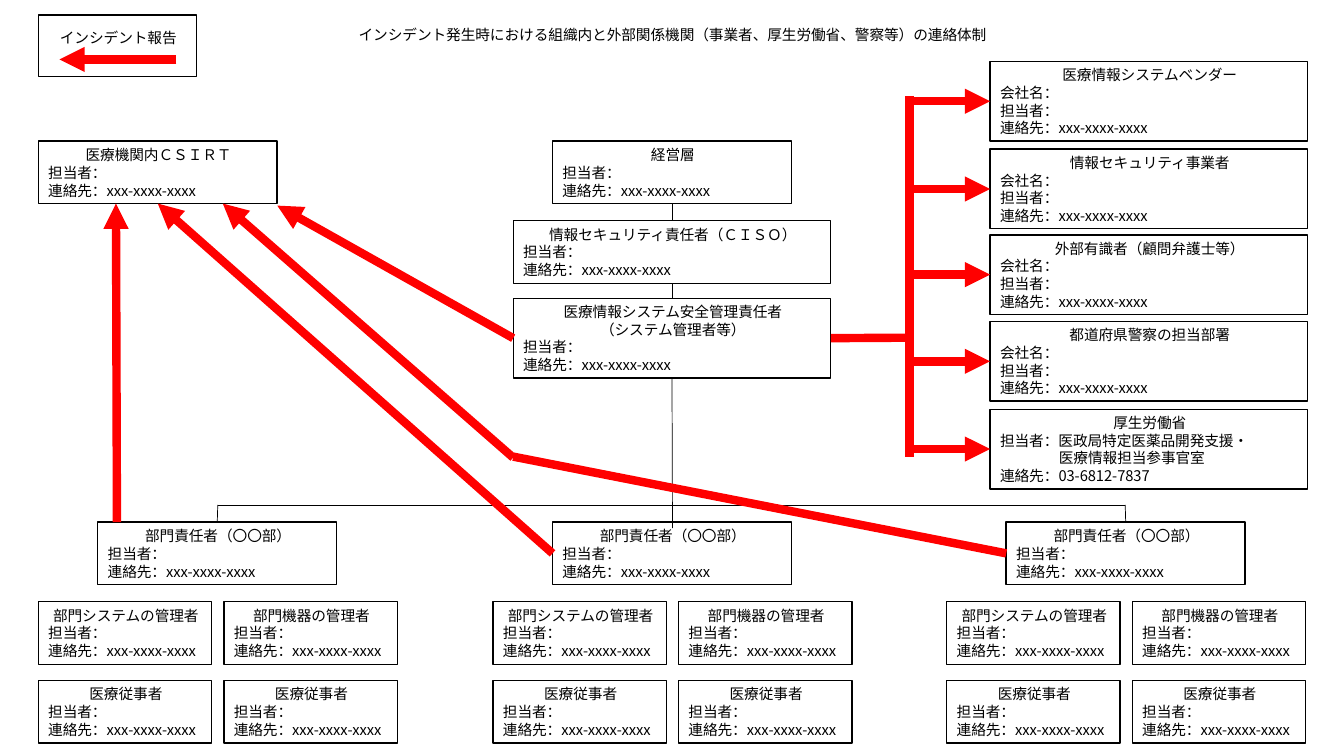
"""Build a slide showing who reports to whom when a security incident occurs."""
from lxml.etree import SubElement
from pptx import Presentation
from pptx.dml.color import RGBColor
from pptx.enum.shapes import MSO_CONNECTOR as Connector, MSO_SHAPE as Shape
from pptx.enum.text import MSO_ANCHOR as Anchor, PP_ALIGN as Align
from pptx.oxml.ns import qn
from pptx.util import Inches, Pt

FONT = "Noto Sans CJK JP"
BLACK, WHITE, RED = "000000", "FFFFFF", "FF0000"
TOP, LEFT, BOTTOM, RIGHT = range(4)
PERSON = "担当者："
COMPANY = "会社名："
CONTACT = "連絡先：xxx-xxxx-xxxx"
STAFF = [PERSON, CONTACT]
color = RGBColor.from_string

presentation = Presentation()
presentation.slide_width = Inches(13.33)
presentation.slide_height = Inches(7.5)
slide = presentation.slides.add_slide(presentation.slide_layouts[6])


def add_box(headings, left, top, width, height, details=(), fill=None, line=BLACK,
            spacing=12.65, bottom_margin=0.05, indents=None):
    """Add a rectangle with centred headings above left-aligned details."""
    shape = slide.shapes.add_shape(
        Shape.RECTANGLE, Inches(left), Inches(top), Inches(width), Inches(height))
    shape.shadow.inherit = False
    if fill:
        shape.fill.solid()
        shape.fill.fore_color.rgb = color(fill)
    else:
        shape.fill.background()
    if line:
        shape.line.color.rgb = color(line)
        shape.line.width = Pt(1)
    else:
        shape.line.fill.background()
    frame = shape.text_frame
    frame.word_wrap = True
    frame.vertical_anchor = Anchor.MIDDLE
    frame.margin_right = Inches(0.08)
    frame.margin_bottom = Inches(bottom_margin)
    for index, text in enumerate([*headings, *details]):
        paragraph = frame.paragraphs[0] if index == 0 else frame.add_paragraph()
        paragraph.alignment = Align.CENTER if index < len(headings) else Align.LEFT
        paragraph.line_spacing = Pt(spacing)
        if indents and index in indents:
            paragraph._p.get_or_add_pPr().set("marL", str(Pt(indents[index])))
        run = paragraph.add_run()
        run.text = text
        run.font.size = Pt(10.5)
        run.font.name = FONT
        run.font.color.rgb = color(BLACK)
        SubElement(run._r.get_or_add_rPr(), qn("a:ea"), typeface=FONT)
    return shape


def add_line(x1, y1, x2, y2, line=RED, width=6, arrow=False, begin=None, end=None):
    """Add a straight line, joined to (shape, side) pairs where given."""
    connector = slide.shapes.add_connector(
        Connector.STRAIGHT, Inches(x1), Inches(y1), Inches(x2), Inches(y2))
    connector.line.color.rgb = color(line)
    connector.line.width = Pt(width)
    if arrow:
        SubElement(connector.line._get_or_add_ln(), qn("a:tailEnd"), type="triangle")
    SubElement(connector._element.spPr, qn("a:effectLst"))
    if begin:
        connector.begin_connect(*begin)
    if end:
        connector.end_connect(*end)


add_box(["インシデント発生時における組織内と外部関係機関（事業者、厚生労働省、警察等）の連絡体制"],
        3.12, 0, 7.09, 0.59, fill=WHITE, line=None, spacing=20)

management = add_box(["経営層"], 5.48, 1.4, 2.37, 0.62, STAFF)
ciso = add_box(["情報セキュリティ責任者（ＣＩＳＯ）"], 5.09, 2.19, 3.15, 0.62, STAFF)
system_manager = add_box(["医療情報システム安全管理責任者", "（システム管理者等）"],
                         5.09, 2.96, 3.15, 0.79, STAFF)
csirt = add_box(["医療機関内ＣＳＩＲＴ"], 0.38, 1.4, 2.37, 0.62, STAFF)

department_heads = []
for left in (0.38, 4.89, 9.39):
    department_heads.append(
        add_box(["部門責任者（〇〇部）"], left + 0.59, 5.18, 2.37, 0.62, STAFF))
    for column, manager in enumerate(["部門システムの管理者", "部門機器の管理者"]):
        for row, role in enumerate([manager, "医療従事者"]):
            add_box([role], left + column * 1.84, 5.97 + row * 0.78, 1.72, 0.62, STAFF)

add_line(6.67, 2.02, 6.67, 2.19, BLACK, 0.5, begin=(management, BOTTOM), end=(ciso, TOP))
add_line(6.67, 2.81, 6.67, 2.96, BLACK, 0.5, begin=(ciso, BOTTOM), end=(system_manager, TOP))
add_line(6.67, 3.75, 6.67, 5.24, BLACK, 0.5, begin=(system_manager, BOTTOM))
add_line(2.16, 5.01, 11.16, 5.01, BLACK, 0.5)
for x, head in ((2.16, department_heads[0]), (11.16, department_heads[2])):
    add_line(x, 5.01, x, 5.18, BLACK, 0.5, end=(head, TOP))

add_line(8.24, 3.35, 9.03, 3.35, begin=(system_manager, RIGHT))
add_line(9.02, 0.95, 9.02, 4.53)

outside_contacts = [
    ("医療情報システムベンダー", 0.61, [COMPANY, *STAFF], None),
    ("情報セキュリティ事業者", 1.48, [COMPANY, *STAFF], None),
    ("外部有識者（顧問弁護士等）", 2.33, [COMPANY, *STAFF], None),
    ("都道府県警察の担当部署", 3.19, [COMPANY, *STAFF], None),
    ("厚生労働省", 4.06, ["担当者：医政局特定医薬品開発支援・", "医療情報担当参事官室",
                     "連絡先：03-6812-7837"], {2: 42}),
]
for name, top, details, indents in outside_contacts:
    contact = add_box([name], 9.82, top, 3.15, 0.79, details, indents=indents)
    middle = top + 0.395
    add_line(9.02, middle, 9.82, middle, arrow=True, end=(contact, LEFT))

add_line(5.09, 3.35, 2.75, 2.04, arrow=True, begin=(system_manager, LEFT))
add_line(5.09, 4.54, 2.21, 2.02, arrow=True)
add_line(5.48, 5.49, 1.56, 2.02, arrow=True,
         begin=(department_heads[1], LEFT), end=(csirt, BOTTOM))
add_line(1.16, 5.18, 1.15, 2.02, arrow=True)
add_line(5.09, 4.53, 9.98, 5.49, end=(department_heads[2], LEFT))

add_box(["インシデント報告"], 0.38, 0.15, 1.57, 0.61, bottom_margin=0.22)
add_line(1.75, 0.59, 0.59, 0.59, arrow=True)

presentation.save("out.pptx")
